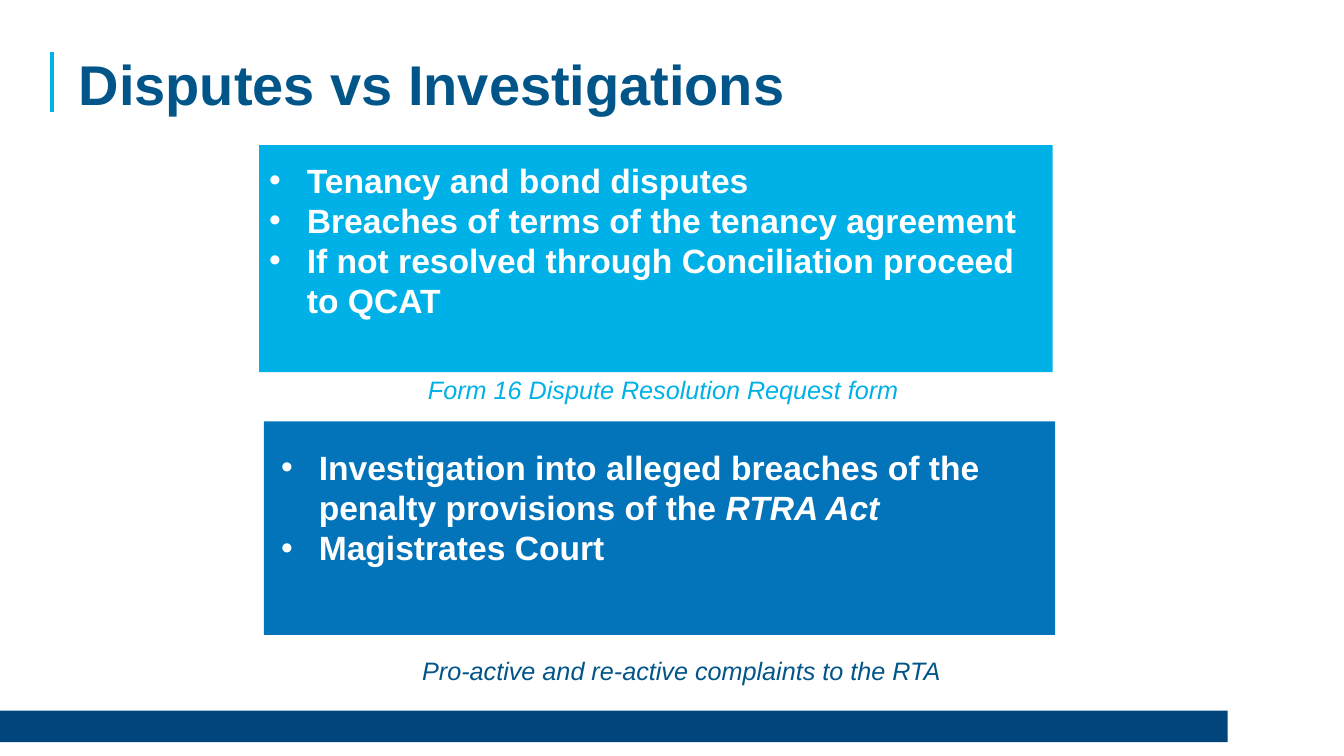
"""Build the slide comparing tenancy disputes with investigations."""
from lxml.etree import SubElement
from pptx import Presentation
from pptx.dml.color import RGBColor
from pptx.enum.shapes import MSO_CONNECTOR, MSO_SHAPE
from pptx.enum.text import MSO_ANCHOR, MSO_AUTO_SIZE, PP_ALIGN
from pptx.oxml.ns import qn
from pptx.util import Cm, Pt

COLORS = {
    "bar": "00457C",
    "title": "025589",
    "disputes": "00B1E7",
    "investigations": "0374B9",
    "white": "FFFFFF",
}


def place(shape, left, top, width, height):
    shape.left, shape.top = Cm(left), Cm(top)
    shape.width, shape.height = Cm(width), Cm(height)


def style(paragraph, size, color, bold=False, italic=None):
    paragraph.font.name = "Arial"
    paragraph.font.size = Pt(size)
    paragraph.font.bold = bold
    paragraph.font.italic = italic
    paragraph.font.color.rgb = RGBColor.from_string(COLORS[color])


presentation = Presentation()
presentation.slide_width, presentation.slide_height = Cm(33.87), Cm(19.05)
slide = presentation.slides.add_slide(presentation.slide_layouts[3])
title, disputes_list, investigations_list = list(slide.placeholders)[:3]

panels = [
    ("bar", (0, 17.91, 30.94, 0.79)),
    ("investigations", (6.65, 10.62, 19.94, 5.38)),
    ("disputes", (6.53, 3.66, 20, 5.72)),
]
for color, box in panels:
    panel = slide.shapes.add_shape(MSO_SHAPE.RECTANGLE, *map(Cm, box))
    panel.shadow.inherit = False
    panel.fill.solid()
    panel.fill.fore_color.rgb = RGBColor.from_string(COLORS[color])
    panel.line.fill.background()

place(title, 1.73, 1.12, 24.82, 1.96)
title.text_frame.text = "Disputes vs Investigations"
title.text_frame.auto_size = MSO_AUTO_SIZE.NONE
title.text_frame.vertical_anchor = MSO_ANCHOR.MIDDLE
title.text_frame.paragraphs[0].alignment = PP_ALIGN.LEFT
style(title.text_frame.paragraphs[0], 40, "title", bold=True)

accent = slide.shapes.add_connector(
    MSO_CONNECTOR.STRAIGHT, Cm(1.32), Cm(1.32), Cm(1.32), Cm(2.82)
)
accent.line.color.rgb = RGBColor.from_string(COLORS["disputes"])
accent.line.width = Pt(3)
SubElement(accent.element.spPr, qn("a:effectLst"))

lists = [
    (investigations_list, (6.83, 11.13, 19.69, 4.37), [
        ["Investigation into alleged breaches of the penalty provisions of the ", "RTRA Act"],
        ["Magistrates Court"],
    ]),
    (disputes_list, (6.53, 3.89, 20, 4.37), [
        ["Tenancy and bond disputes"],
        ["Breaches of terms of the tenancy agreement"],
        ["If not resolved through Conciliation proceed to QCAT"],
    ]),
]
for placeholder, box, items in lists:
    place(placeholder, *box)
    slide.shapes.element.append(placeholder.element)
    frame = placeholder.text_frame
    frame.auto_size = MSO_AUTO_SIZE.NONE
    frame.vertical_anchor = MSO_ANCHOR.TOP
    for index, texts in enumerate(items):
        paragraph = frame.add_paragraph() if index else frame.paragraphs[0]
        paragraph.space_before = Pt(0)
        properties = paragraph._p.get_or_add_pPr()
        properties.set("marL", str(Cm(0.95)))
        properties.set("indent", str(Cm(-0.95)))
        SubElement(properties, qn("a:buFont"), typeface="Arial")
        SubElement(properties, qn("a:buChar"), char="•")
        style(paragraph, 24, "white", bold=True)
        for position, text in enumerate(texts):
            run = paragraph.add_run()
            run.text = text
            if position:
                run.font.italic = True

captions = [
    ("Form 16 Dispute Resolution Request form", "disputes", (9.22, 9.32, 14.99, 1.02)),
    ("Pro-active and re-active complaints to the RTA", "title", (8.92, 16.38, 16.51, 1.02)),
]
for text, color, box in captions:
    caption = slide.shapes.add_textbox(*map(Cm, box))
    caption.text_frame.word_wrap = True
    caption.text_frame.text = text
    caption.text_frame.paragraphs[0].alignment = PP_ALIGN.CENTER
    style(caption.text_frame.paragraphs[0], 18, color, italic=True)

presentation.save("out.pptx")
